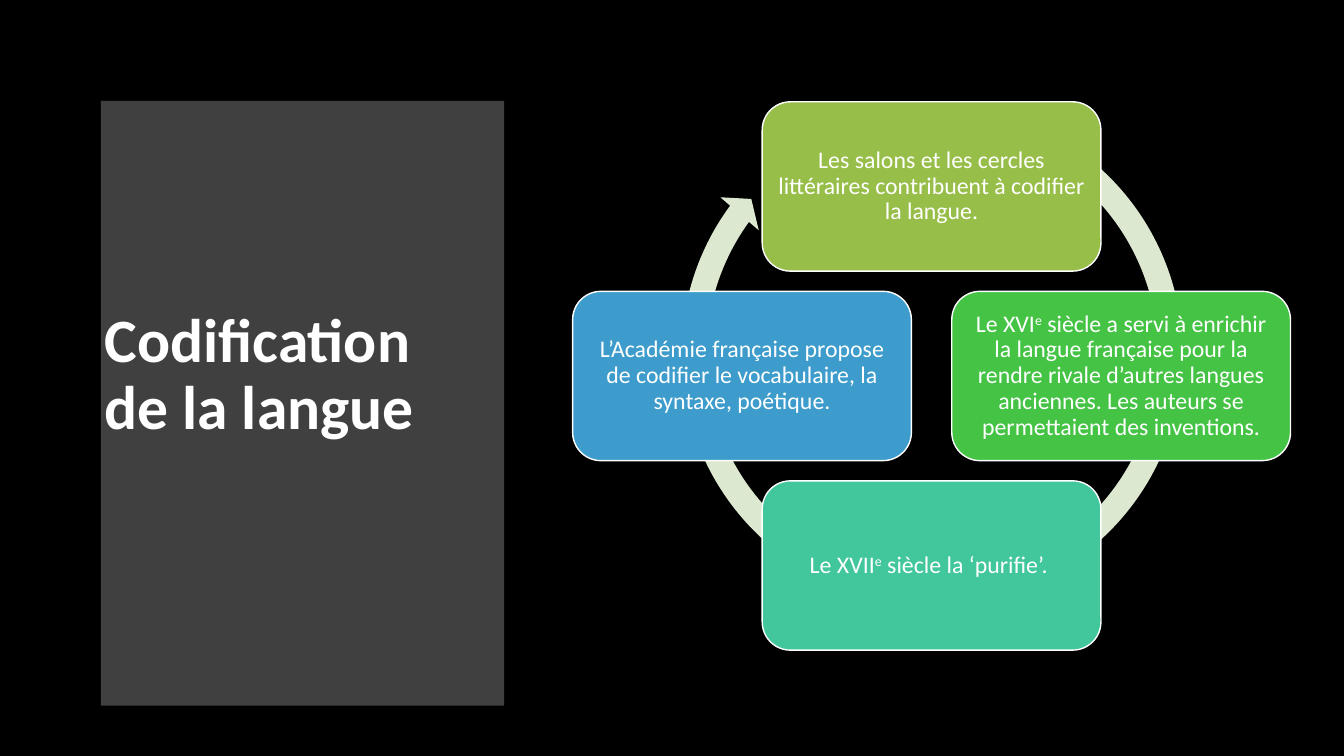
from math import cos, radians, sin
from pptx import Presentation
from pptx.dml.color import RGBColor
from pptx.enum.shapes import MSO_SHAPE
from pptx.enum.text import MSO_ANCHOR, PP_ALIGN
from pptx.util import Inches, Pt

TITLE = "Codification de la langue"
# Each step: fill name, then runs as (text, superscript)
STEPS = [
    ("lime", [("Les salons et les cercles littéraires contribuent à codifier la langue.", False)]),
    ("green", [("Le XVI", False), ("e", True),
               (" siècle a servi à enrichir la langue française pour la rendre rivale "
                "d’autres langues anciennes. Les auteurs se permettaient des inventions.", False)]),
    ("teal", [("Le XVII", False), ("e", True), (" siècle la ‘purifie’. ", False)]),
    ("blue", [("L’Académie française propose de codifier le vocabulaire, "
               "la syntaxe, poétique.", False)]),
]
COLORS = {"back": "000000", "panel": "404040", "text": "FFFFFF", "ring": "DDE8D0",
          "lime": "97BE49", "green": "45C345", "teal": "41C79B", "blue": "3D9CCC"}
FONT = "Calibri"
WIDE, HIGH = 13.33, 7.5
PANEL = {"left": 0.53, "top": 0.52, "edge": 5.08, "bulge": 0.24, "high": 6.44}
HUB, REACH = (9.24, 3.73), 1.88
BOX_W, BOX_H = 3.36, 1.68
RING = (6.63, 0.9, 5.23, 5.23)
RING_ADJ = (0.047, 2.729, 129.673, 179.388, 0.048)


def tint(name):
    return RGBColor.from_string(COLORS[name])


def paint(shape, name, line=None):
    shape.shadow.inherit = False
    shape.fill.solid()
    shape.fill.fore_color.rgb = tint(name)
    if line:
        shape.line.color.rgb = tint(line)
        shape.line.width = Pt(1)
    else:
        shape.line.fill.background()


def write(frame, runs, size, bold=False, align=PP_ALIGN.LEFT):
    frame.word_wrap = True
    frame.vertical_anchor = MSO_ANCHOR.MIDDLE
    para = frame.paragraphs[0]
    para.alignment, para.line_spacing = align, 0.9
    font = para.font
    font.name, font.size, font.bold = FONT, Pt(size), bold
    font.color.rgb = tint("text")
    for text, raised in runs:
        run = para.add_run()
        run.text = text
        if raised:
            run._r.get_or_add_rPr().set("baseline", "30000")


def add_panel(shapes, count=40):
    """Draw the title panel, whose right side bows outward."""
    left, top, high = PANEL["left"], PANEL["top"], PANEL["high"]
    curve = []
    for i in range(count + 1):
        share = i / count
        bow = PANEL["bulge"] * (1 - abs(2 * share - 1) ** 2.2)
        curve.append((PANEL["edge"] + bow, top + high * share))
    pen = shapes.build_freeform(left, top, scale=Inches(1))
    pen.add_line_segments(curve + [(left, top + high)], close=True)
    paint(pen.convert_to_shape(), "panel")


def add_ring(shapes):
    ring = shapes.add_shape(MSO_SHAPE.CIRCULAR_ARROW, *map(Inches, RING))
    for i, value in enumerate(RING_ADJ):
        ring.adjustments[i] = value
    paint(ring, "ring")


def add_steps(shapes):
    """Place the steps clockwise around the hub, from the top."""
    for i, (fill, runs) in enumerate(STEPS):
        turn = radians(360 * i / len(STEPS) - 90)
        left = HUB[0] + REACH * cos(turn) - BOX_W / 2
        top = HUB[1] + REACH * sin(turn) - BOX_H / 2
        box = shapes.add_shape(MSO_SHAPE.ROUNDED_RECTANGLE,
                               *map(Inches, (left, top, BOX_W, BOX_H)))
        paint(box, fill, "text")
        frame = box.text_frame
        frame.margin_left = frame.margin_right = Inches(0.07)
        frame.margin_top = frame.margin_bottom = Inches(0.07)
        write(frame, runs, 17, align=PP_ALIGN.CENTER)


def main():
    deck = Presentation()
    deck.slide_width, deck.slide_height = Inches(WIDE), Inches(HIGH)
    slide = deck.slides.add_slide(deck.slide_layouts[6])
    slide.background.fill.solid()
    slide.background.fill.fore_color.rgb = tint("back")
    add_panel(slide.shapes)
    title = slide.shapes.add_textbox(*map(Inches, (0.94, 1.11, 3.74, 5.24)))
    write(title.text_frame, [(TITLE, False)], 44, bold=True)
    add_ring(slide.shapes)
    add_steps(slide.shapes)
    deck.save("out.pptx")


if __name__ == "__main__":
    main()
